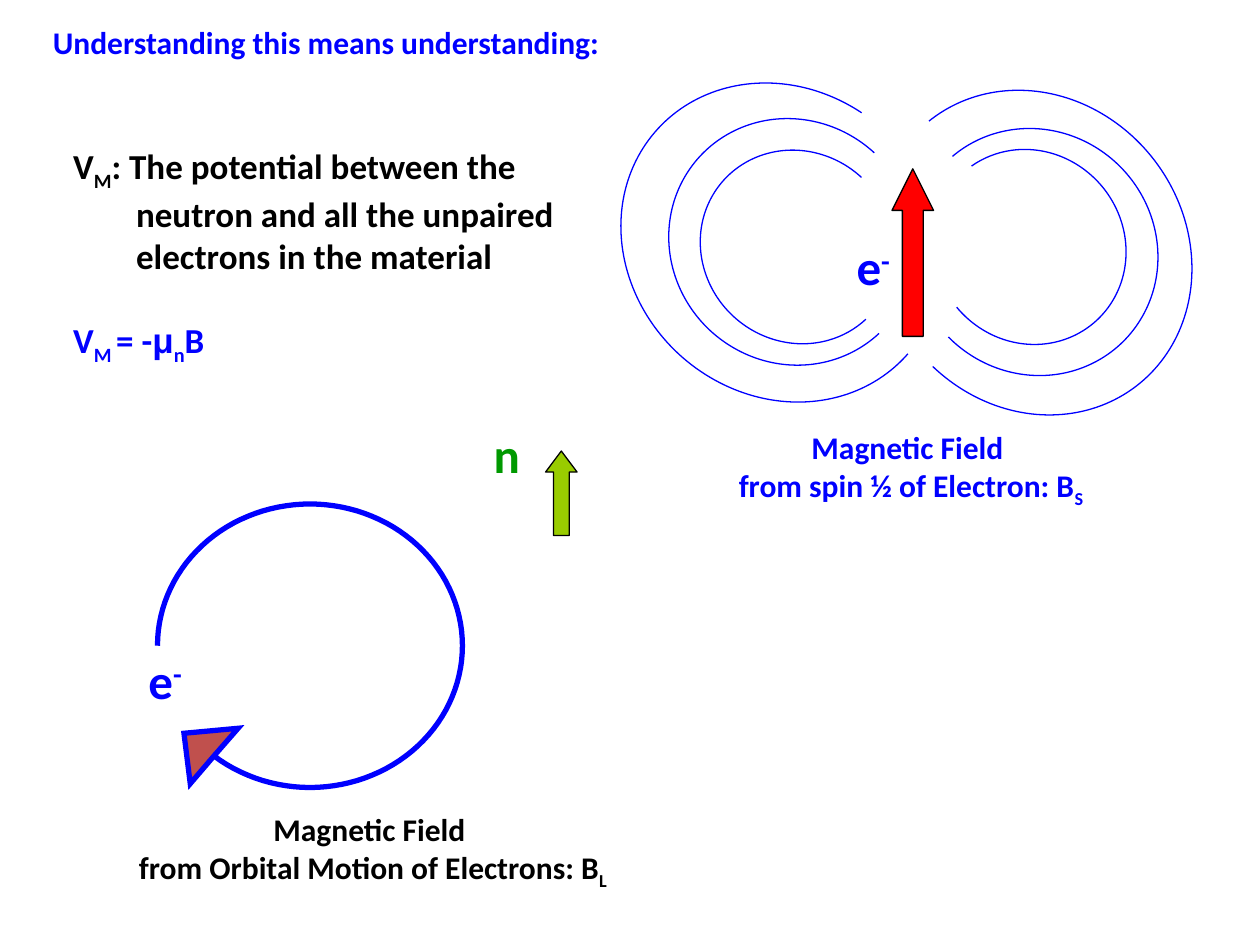
from math import cos, radians, sin

from lxml import etree
from pptx import Presentation
from pptx.dml.color import RGBColor
from pptx.enum import shapes, text
from pptx.oxml.ns import qn
from pptx.util import Inches, Pt

BLUE = RGBColor(0x00, 0x00, 0xFF)
BLACK = RGBColor(0x00, 0x00, 0x00)
RED = RGBColor(0xFF, 0x00, 0x00)
GREEN = RGBColor(0x00, 0x99, 0x00)
LIME = RGBColor(0x99, 0xCC, 0x00)
BRICK = RGBColor(0xC0, 0x50, 0x4D)
SUB, SUPER = -25000, 30000
LEFT, CENTER = text.PP_ALIGN.LEFT, text.PP_ALIGN.CENTER
ELECTRON = [["e", ("-", SUPER)]]


def place(sp, x, y, w, h):
    for name, value in dict(left=x, top=y, width=w, height=h).items():
        setattr(sp, name, Inches(value))


def write(sp, lines, size, color, align=LEFT):
    """Fill a frame; a line is a list of strings or (string, baseline) pairs."""
    tf = sp.text_frame
    frame = dict(word_wrap=False, auto_size=text.MSO_AUTO_SIZE.NONE,
                 vertical_anchor=text.MSO_ANCHOR.TOP)
    for name, value in frame.items():
        setattr(tf, name, value)
    for i, line in enumerate(lines):
        p = tf.paragraphs[0] if i == 0 else tf.add_paragraph()
        p.alignment, p.space_before = align, Pt(0)
        for part in line:
            string, baseline = (part, 0) if isinstance(part, str) else part
            r = p.add_run()
            r.text = string
            font = dict(name="Arial" if string == "μ" else "Calibri",
                        size=Pt(size), bold=True)
            for name, value in font.items():
                setattr(r.font, name, value)
            r.font.color.rgb = color
            if baseline:
                r._r.get_or_add_rPr().set("baseline", str(baseline))
    return tf


def add_label(slide, box, lines, size, color, align=LEFT):
    sp = slide.shapes.add_textbox(*map(Inches, box))
    write(sp, lines, size, color, align)


def style(sp, fill, line, width):
    sp.shadow.inherit = False
    if fill is None:
        sp.fill.background()
    else:
        sp.fill.solid()
        sp.fill.fore_color.rgb = fill
    sp.line.color.rgb = line
    sp.line.width = Pt(width)


def add_up_arrow(slide, box, fill, head):
    sp = slide.shapes.add_shape(shapes.MSO_SHAPE.UP_ARROW, *map(Inches, box))
    sp.adjustments[0], sp.adjustments[1] = 0.5, head
    style(sp, fill, BLACK, 0.75)


def add_title(slide, x, y, w, h):
    place(slide.shapes.title, x, y, w, h)
    write(slide.shapes.title, [["Understanding this means understanding:"]], 18, BLUE)


def add_potential(slide, x, y, w, h):
    body = slide.placeholders[1]
    place(body, x, y, w, h)
    lines = [["V", ("M", SUB), ": The potential between the"],
             ["neutron and all the unpaired"],
             ["electrons in the material"],
             ["V", ("M ", SUB), "= -", "μ", ("n", SUB), "B"]]
    tf = write(body, lines, 20, BLACK)
    for p, margin in zip(tf.paragraphs, (0, 0.5, 0.5, 0)):
        pPr = p._p.get_or_add_pPr()
        pPr.set("marL", str(Inches(margin)))
        pPr.set("indent", "0")
        etree.SubElement(pPr, qn("a:buNone"))
    formula = tf.paragraphs[-1]
    formula.space_before = Pt(24)
    for r in formula.runs:
        r.font.color.rgb = BLUE


def add_spin_field(slide, x, y):
    """Field lines on both sides of the electron's spin arrow."""
    sizes = [(1.5, 1.58, 94, 0), (1.92, 2, 94, 0), (2.41, 2.67, 88.8, 349)]
    sides = [[(0.58, 0.58, 312.6), (0.33, 0.33, 312.6), (0, 0, 312.6)],
             [(2.42, 0.58, 140.4), (2.25, 0.41, 135.4), (2, 0.08, 142.6)]]
    for side in sides:
        for (dx, dy, turn), (w, h, start, end) in zip(side, sizes):
            sp = slide.shapes.add_shape(
                shapes.MSO_SHAPE.ARC, *map(Inches, (x + dx, y + dy, w, h)))
            # arc adjustments hold 60000ths of a degree, scaled by 100000
            sp.adjustments[0], sp.adjustments[1] = start * 0.6, end * 0.6
            sp.rotation = turn
            style(sp, None, BLUE, 0.75)
    add_up_arrow(slide, (x + 2.08, y + 0.75, 0.33, 1.33), RED, 1)
    add_label(slide, (x + 1.7, y + 1.24, 0.46, 0.57), ELECTRON, 28, BLUE)
    add_label(slide, (x + 0.17, y + 2.76, 4.12, 0.9),
              [["Magnetic Field "], ["from spin ½ of Electron: B", ("S", SUB)]],
              18, BLUE, CENTER)


def add_orbit(slide, x, y, w, h):
    """Electron orbit ending in an arrowhead, with its labels."""
    rx, ry = w / 2, h / 2
    arc = [(rx + rx * cos(radians(a)), ry + ry * sin(radians(a)))
           for a in range(180, 490, 3)]
    head = [(0.26, 2.22), (0.21, 1.82), (0.64, 1.78), arc[-1]]
    points = [(Inches(px), Inches(py)) for px, py in arc + head + arc[-2::-1]]
    builder = slide.shapes.build_freeform(*points[0], scale=1.0)
    builder.add_line_segments(points[1:], close=True)
    sp = builder.convert_to_shape(Inches(x), Inches(y))
    style(sp, BRICK, BLUE, 3)
    etree.SubElement(sp._element.spPr.find(qn("a:ln")), qn("a:miter"), lim="800000")
    add_label(slide, (x - 0.17, y + 1.11, 0.46, 0.57), ELECTRON, 28, BLUE)
    add_label(slide, (x - 1.05, y + 2.38, 5.52, 1.3),
              [["Magnetic Field "], ["from Orbital Motion of Electrons: B", ("L", SUB)]],
              18, BLACK, CENTER)


def add_neutron(slide, x, y):
    add_up_arrow(slide, (x + 0.51, y + 0.26, 0.25, 0.67), LIME, 0.667)
    add_label(slide, (x, y, 0.42, 0.57), [["n"]], 28, GREEN)


def main():
    prs = Presentation()
    prs.slide_width, prs.slide_height = Inches(10), Inches(7.5)
    slide = prs.slides.add_slide(prs.slide_layouts[1])
    add_title(slide, 0.32, 0.13, 6.2, 0.5)
    add_potential(slide, 0.48, 1.1, 4.23, 2.43)
    add_spin_field(slide, 5, 0.59)
    add_orbit(slide, 1.25, 4, 2.42, 2.25)
    add_neutron(slide, 3.82, 3.32)
    prs.save("out.pptx")


if __name__ == "__main__":
    main()
